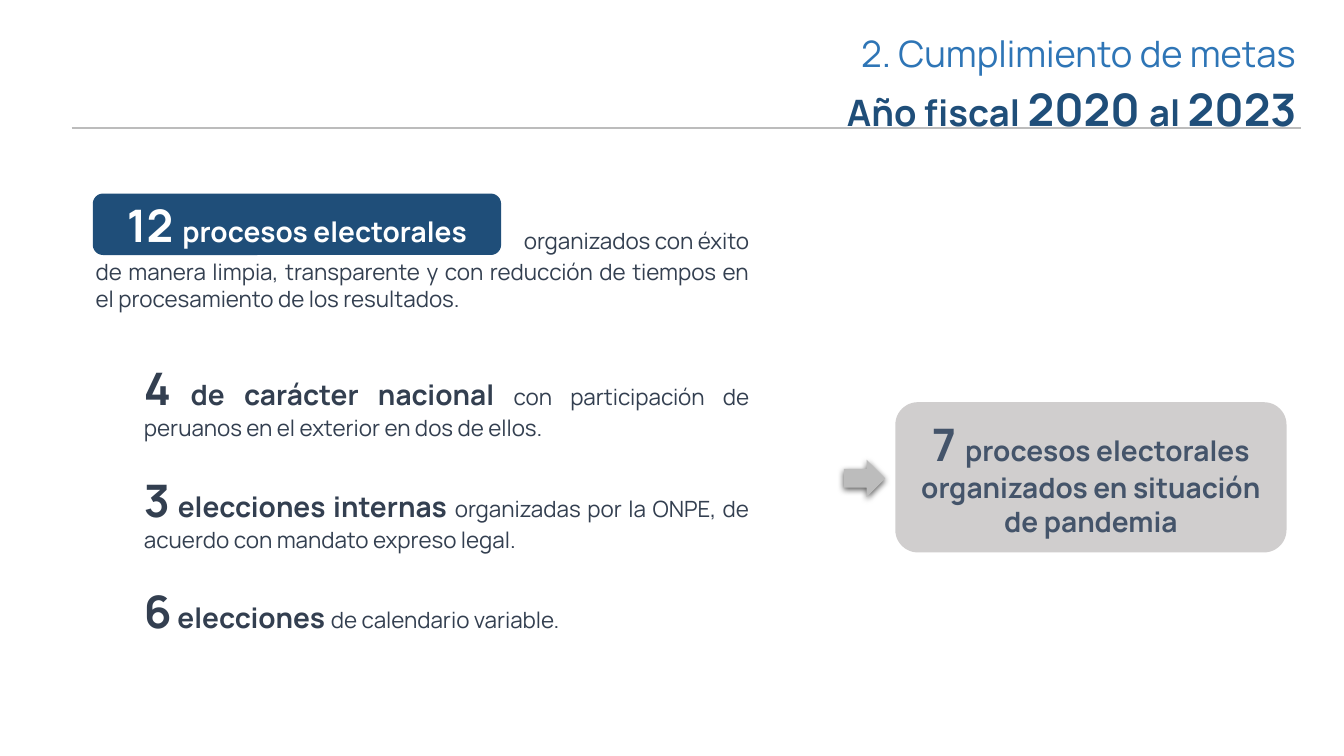
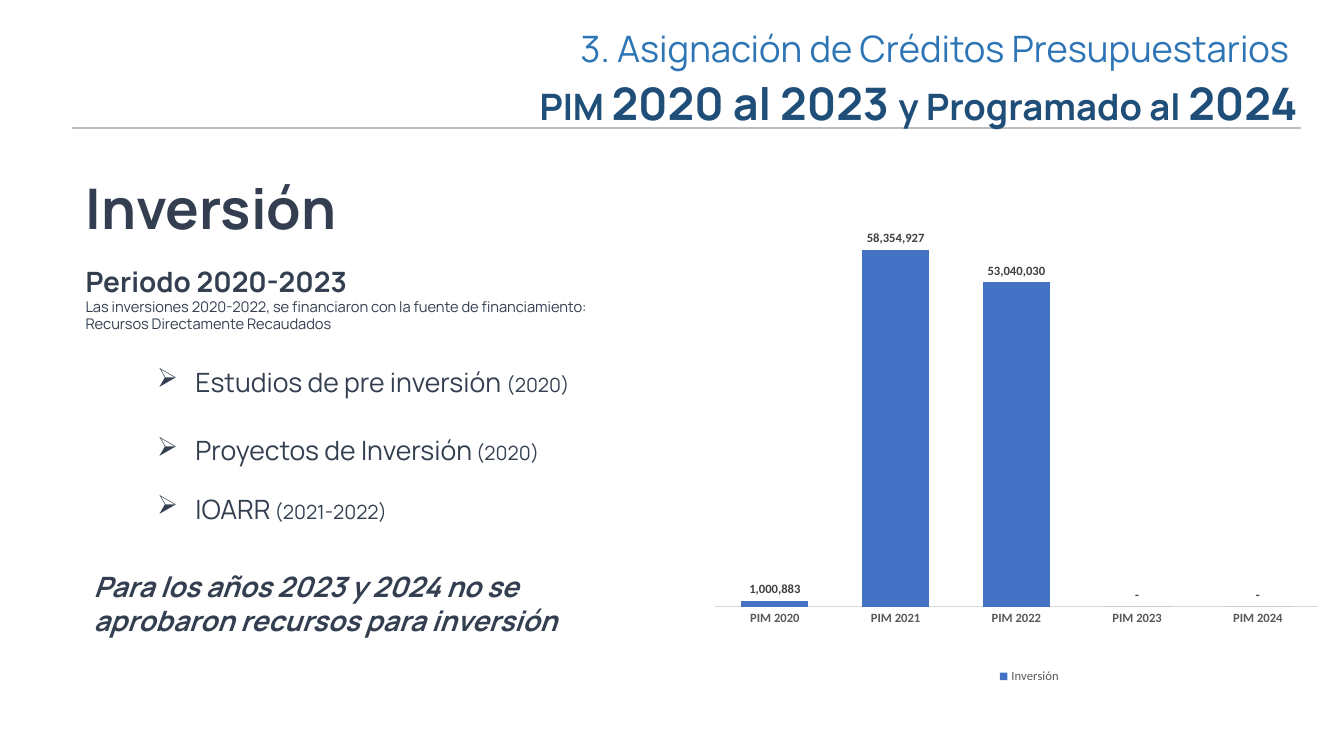
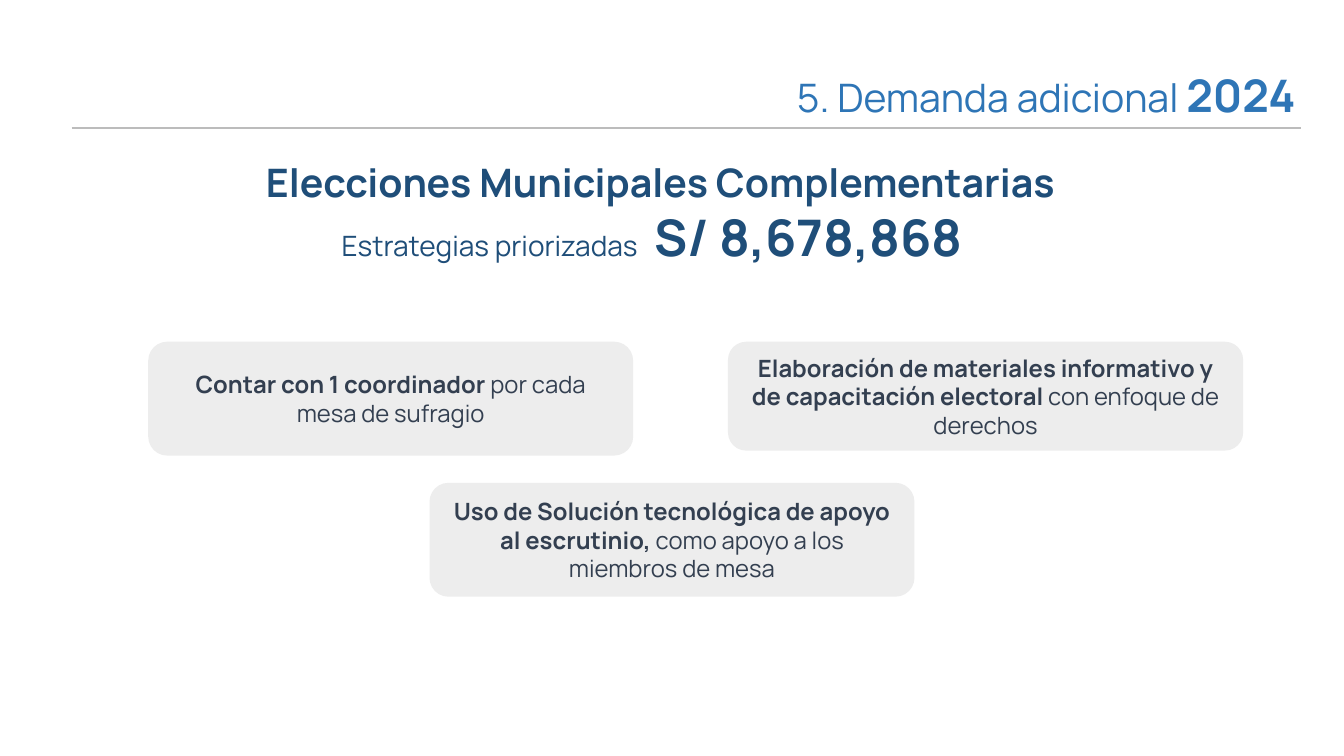
"""Three budget slides: goals met, investment and additional demand."""
from lxml import etree
from pptx import Presentation
from pptx.chart.data import CategoryChartData
from pptx.dml.color import RGBColor
from pptx.enum.chart import XL_CHART_TYPE, XL_LABEL_POSITION, XL_LEGEND_POSITION, XL_TICK_MARK
from pptx.enum.shapes import MSO_CONNECTOR, MSO_SHAPE
from pptx.enum.text import MSO_ANCHOR, MSO_AUTO_SIZE, PP_ALIGN
from pptx.oxml import parse_xml
from pptx.oxml.ns import nsdecls, qn
from pptx.util import Inches, Pt

FONT = "Manrope"
COLORS = {
    "blue": "2E75B6", "navy": "1F4E79", "ink": "333F50", "slate": "44546A",
    "white": "FFFFFF", "rule": "BCBCBC", "gray": "D0CECE", "pale": "EDEDED",
    "bar": "4472C4", "axis": "D9D9D9", "tick": "595959", "label": "404040",
}
RGB = {name: RGBColor.from_string(value) for name, value in COLORS.items()}
LEFT, CENTER, RIGHT, JUSTIFY = PP_ALIGN.LEFT, PP_ALIGN.CENTER, PP_ALIGN.RIGHT, PP_ALIGN.JUSTIFY


def write(tf, paragraphs, color, align=LEFT, anchor=MSO_ANCHOR.TOP, before=0, after=0):
    """Fill a text frame with paragraphs of (text, size, bold[, color]) runs."""
    tf.word_wrap = True
    tf.auto_size = MSO_AUTO_SIZE.NONE
    tf.vertical_anchor = anchor
    for i, runs in enumerate(paragraphs):
        p = tf.paragraphs[0] if i == 0 else tf.add_paragraph()
        p.alignment = align
        p.space_before = Pt(before if i else 0)
        p.space_after = Pt(after)
        for text, size, bold, *own in runs:
            r = p.add_run()
            r.text = text
            r.font.name = FONT
            r.font.size = Pt(size)
            r.font.bold = bold
            r.font.color.rgb = RGB[own[0] if own else color]


def box(s, at, paragraphs, color="ink", align=LEFT, fill=None, before=0):
    """Add a text box, or a rounded panel when a fill is given."""
    at = [Inches(v) for v in at]
    if fill is None:
        sp = s.shapes.add_textbox(*at)
        write(sp.text_frame, paragraphs, color, align, before=before)
    else:
        sp = s.shapes.add_shape(MSO_SHAPE.ROUNDED_RECTANGLE, *at)
        sp.shadow.inherit = False
        sp.fill.solid()
        sp.fill.fore_color.rgb = RGB[fill]
        sp.line.fill.background()
        write(sp.text_frame, paragraphs, color, CENTER, MSO_ANCHOR.MIDDLE)
    return sp


prs = Presentation()
prs.slide_width, prs.slide_height = Inches(13.33), Inches(7.5)
layout = prs.slide_layouts[5]

titles = [
    ((3.77, 0.26, 9.19, 1.15), 4.5, [
        [("2. Cumplimiento de metas", 26, False)],
        [("Año fiscal ", 26, True, "navy"), ("2020 ", 32, True, "navy"),
         ("al ", 26, True, "navy"), ("2023", 32, True, "navy")]]),
    ((2.28, 0.21, 10.69, 1.15), 4.5, [
        [("3. Asignación de Créditos Presupuestarios ", 26, False)],
        [("PIM ", 26, True, "navy"), ("2020 al 2023 ", 32, True, "navy"),
         ("y Programado al ", 26, True, "navy"), ("2024", 32, True, "navy")]]),
    ((6.28, 0.62, 6.67, 0.64), 0, [
        [("5. Demanda adicional ", 28, False), ("2024", 32, True)]]),
]
for at, after, paragraphs in titles:
    s = prs.slides.add_slide(layout)
    sp = s.shapes.title
    sp.left, sp.top, sp.width, sp.height = [Inches(v) for v in at]
    write(sp.text_frame, paragraphs, "blue", RIGHT, after=after)
goals, investment, demand = prs.slides

rule = goals.shapes.add_connector(
    MSO_CONNECTOR.STRAIGHT, Inches(0.71), Inches(1.27), Inches(12.9), Inches(1.27))
rule.line.color.rgb = RGB["rule"]
rule.line.width = Pt(1.5)
etree.SubElement(rule.element.spPr, qn("a:effectLst"))
layout.shapes.element.append(rule.element)

box(goals, (1.33, 3.53, 6.2, 2.79), [
    [("4", 32, True), (" de carácter nacional ", 20, True),
     ("con participación de peruanos en el exterior en dos de ellos.", 16, False)],
    [("3", 32, True), (" elecciones internas ", 20, True),
     ("organizadas por la ONPE, de acuerdo con mandato expreso legal.", 16, False)],
    [("6", 32, True), (" elecciones ", 20, True), ("de calendario variable.", 16, False)],
], align=JUSTIFY, before=22)
box(goals, (0.92, 1.92, 4.05, 0.61),
    [[("12 ", 32, True), ("procesos electorales", 20, True)]], "white", fill="navy")
box(goals, (4.75, 2.2, 2.78, 0.37), [[("organizados con éxito", 16, False)]], align=RIGHT)
box(goals, (0.85, 2.51, 6.68, 0.64), [[
    ("de manera limpia, transparente y con reducción de tiempos en el procesamiento "
     "de los resultados.", 16, False)]], align=JUSTIFY)

arrow = goals.shapes.add_shape(
    MSO_SHAPE.DOWN_ARROW, Inches(8.39), Inches(4.54), Inches(0.37), Inches(0.41))
arrow.rotation = 270
arrow.fill.solid()
arrow.fill.fore_color.rgb = RGB["rule"]
arrow.line.fill.background()
arrow.element.spPr.append(parse_xml(
    f'<a:effectLst {nsdecls("a")}><a:outerShdw blurRad="{Pt(4.5)}" dist="{Pt(1.5)}" '
    'dir="5400000" rotWithShape="0"><a:srgbClr val="000000"><a:alpha val="63000"/>'
    '</a:srgbClr></a:outerShdw></a:effectLst>'))

pandemic = box(goals, (8.88, 3.99, 3.88, 1.49), [[
    ("7 ", 32, True),
    ("procesos electorales organizados en situación de pandemia", 20, True)]],
    "slate", fill="gray")
pandemic.adjustments[0] = 0.15

kinds = box(investment, (0.96, 3.24, 5.28, 2.35), [
    [("Estudios de pre inversión ", 19, False), ("(2020)", 14, False)],
    [("Proyectos de Inversión", 19, False), (" (2020)", 14, False)],
    [("IOARR", 19, False), (" (2021-2022)", 14, False)]])
kinds.text_frame.vertical_anchor = MSO_ANCHOR.MIDDLE
for p, before in zip(kinds.text_frame.paragraphs, (0, 26, 19)):
    p.space_before = Pt(before)
    p.level = 1
    pPr = p._p.get_or_add_pPr()
    pPr.set("marL", str(Inches(0.88)))
    pPr.set("indent", str(Inches(-0.38)))
    etree.SubElement(pPr, qn("a:buChar")).set("char", "➢")

closing = box(investment, (0.83, 5.6, 5.77, 0.77), [[
    ("Para los años 2023 y 2024 no se aprobaron recursos para inversión", 20, True)]])
closing.text_frame.paragraphs[0].runs[0].font.italic = True
box(investment, (0.75, 1.67, 5.5, 0.77), [[("Inversión", 40, True)]])
box(investment, (0.75, 2.57, 5.77, 0.79), [
    [("Periodo 2020-2023", 20, True)],
    [("Las inversiones 2020-2022, se financiaron con la fuente de financiamiento: "
      "Recursos Directamente Recaudados", 10.5, False)]])

data = CategoryChartData(number_format="#,##0")
data.categories = [f"PIM {year}" for year in range(2020, 2025)]
data.add_series("Inversión", (1000883, 58354927, 53040030, 0, 0))
chart = investment.shapes.add_chart(
    XL_CHART_TYPE.COLUMN_CLUSTERED, Inches(6.96), Inches(1.55), Inches(6.37), Inches(5.52),
    data).chart
chart.has_title = False
chart.font.name = "Calibri"
chart.font.size = Pt(10)
plot = chart.plots[0]
plot.gap_width, plot.overlap = 80, -27
plot.vary_by_categories = False
bars = plot.series[0]
bars.format.fill.solid()
bars.format.fill.fore_color.rgb = RGB["bar"]
bars.invert_if_negative = False
labels = bars.data_labels
labels.show_value = True
labels.position = XL_LABEL_POSITION.OUTSIDE_END
labels.number_format = '#,##0;-#,##0;"-"'
labels.number_format_is_linked = False
chart.value_axis.visible = False
chart.value_axis.has_major_gridlines = False
chart.value_axis.minimum_scale = 0
chart.value_axis.maximum_scale = 70000000
axis = chart.category_axis
axis.major_tick_mark = XL_TICK_MARK.NONE
axis.format.line.color.rgb = RGB["axis"]
axis.format.line.width = Pt(0.75)
chart.has_legend = True
chart.legend.position = XL_LEGEND_POSITION.RIGHT
chart.legend.include_in_layout = False
for font, color, bold in ((labels.font, "label", True), (axis.tick_labels.font, "tick", True),
                          (chart.legend.font, "tick", False)):
    font.name = "Calibri"
    font.size = Pt(9)
    font.bold = bold
    font.color.rgb = RGB[color]

for tag, index, target, area in (
        ("c:plotArea", 0, '<c:layoutTarget val="inner"/>', (0.02, 0.04, 0.94, 0.77)),
        ("c:legend", 1, "", (0.44, 0.91, 0.14, 0.05))):
    part = chart.element.find(".//" + qn(tag))
    for old in part.findall(qn("c:layout")):
        part.remove(old)
    modes = '<c:xMode val="edge"/><c:yMode val="edge"/>'
    sizes = "".join(f'<c:{key} val="{value}"/>' for key, value in zip("xywh", area))
    part.insert(index, parse_xml(
        f'<c:layout {nsdecls("c")}><c:manualLayout>{target}{modes}{sizes}'
        '</c:manualLayout></c:layout>'))

strategies = [
    ((1.47, 3.39, 4.81, 1.13), "Contar con 1 coordinador ", "por cada mesa de sufragio"),
    ((7.22, 3.39, 5.11, 1.08),
     "Elaboración de materiales informativo y de capacitación electoral ",
     "con enfoque de derechos"),
    ((4.26, 4.79, 4.81, 1.13), "Uso de Solución tecnológica de apoyo al escrutinio, ",
     "como apoyo a los miembros de mesa"),
]
for at, strong, rest in strategies:
    box(demand, at, [[(strong, 17, True), (rest, 17, False)]], fill="pale")
box(demand, (2.54, 1.52, 10.17, 0.57),
    [[("Elecciones Municipales Complementarias", 28, True)]], "navy")
amount = box(demand, (3.29, 2, 7.01, 0.71),
             [[("Estrategias priorizadas\t", 20, False), ("S/ 8,678,868", 36, True)]], "navy")
pPr = amount.text_frame.paragraphs[0]._p.get_or_add_pPr()
tabs = etree.SubElement(pPr, qn("a:tabLst"))
etree.SubElement(tabs, qn("a:tab"), pos=str(Inches(3.1)), algn="l")

prs.save("out.pptx")
